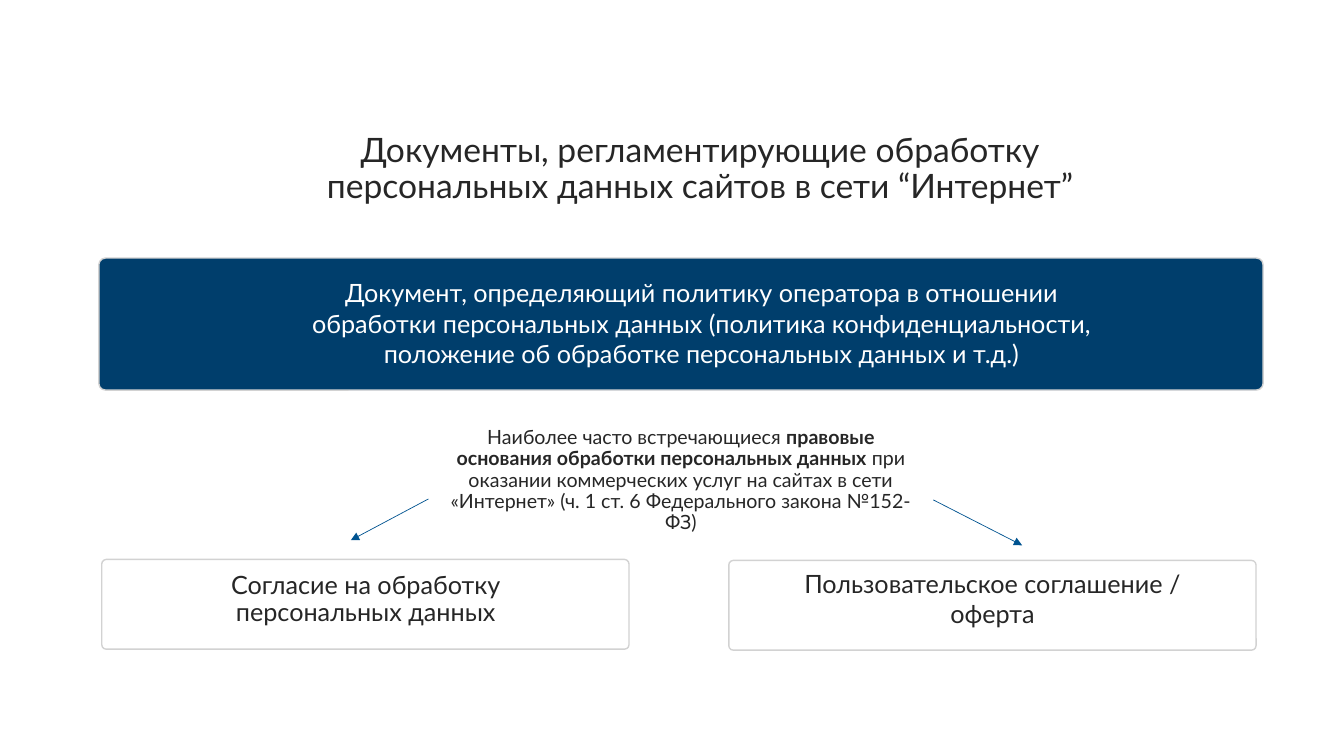
from dataclasses import dataclass

from lxml.etree import SubElement
from pptx import Presentation
from pptx.dml.color import RGBColor
from pptx.enum.shapes import MSO_CONNECTOR, MSO_SHAPE
from pptx.enum.text import MSO_ANCHOR, MSO_AUTO_SIZE, PP_ALIGN
from pptx.oxml.ns import qn
from pptx.slide import Slide
from pptx.util import Pt


@dataclass(frozen=True)
class Theme:
    font: str = "Lato"
    ink: str = "262626"
    white: str = "FFFFFF"
    navy: str = "003E6C"
    border: str = "D2D2D2"
    arrow: str = "005390"
    title_size: float = 24
    body_size: float = 18
    note_size: float = 14


@dataclass(frozen=True)
class Frame:
    left: float
    top: float
    width: float
    height: float

    def lengths(self) -> tuple:
        return Pt(self.left), Pt(self.top), Pt(self.width), Pt(self.height)


@dataclass(frozen=True)
class Span:
    text: str
    bold: bool = False


@dataclass(frozen=True)
class Label:
    frame: Frame
    spans: tuple[Span, ...]
    size: float
    color: str
    line_spacing: float = 1.0


@dataclass(frozen=True)
class Card:
    frame: Frame
    fill: str | None = None


@dataclass(frozen=True)
class Arrow:
    start: tuple[float, float]
    end: tuple[float, float]


THEME = Theme()
CARD_WIDTH, CARD_HEIGHT = 376.6, 64.1

TITLE = Label(
    Frame(211.7, 91.4, 576.7, 54.7),
    (Span("Документы, регламентирующие обработку персональных данных сайтов в сети “Интернет”"),),
    THEME.title_size, THEME.ink, 0.9,
)

CARDS = (
    Card(Frame(70.6, 184.3, 831.6, 94.3), THEME.navy),
    Card(Frame(72.7, 399.6, CARD_WIDTH, CARD_HEIGHT)),
    Card(Frame(520.6, 400.3, CARD_WIDTH, CARD_HEIGHT)),
)

LABELS = (
    Label(
        Frame(213.1, 205.2, 576, 51.1),
        (Span("Документ, определяющий политику оператора в отношении обработки персональных данных "
              "(политика конфиденциальности, положение об обработке персональных данных и т.д.)"),),
        THEME.body_size, THEME.white,
    ),
    Label(
        Frame(312.5, 319.7, 347.8, 47.5),
        (Span("Наиболее часто встречающиеся "),
         Span("правовые основания обработки персональных данных ", True),
         Span("при оказании коммерческих услуг на сайтах в сети «Интернет» "
              "(ч. 1 ст. 6 Федерального закона №152-ФЗ)")),
        THEME.note_size, THEME.ink, 0.9,
    ),
    Label(
        Frame(98.6, 381.6, 325.4, 93.6),
        (Span("Согласие на обработку персональных данных"),),
        THEME.body_size, THEME.ink, 0.9,
    ),
    Label(
        Frame(560.2, 413.3, 297.4, 28.8),
        (Span("Пользовательское соглашение / оферта"),),
        THEME.body_size, THEME.ink,
    ),
)

ARROWS = (
    Arrow((306, 356.4), (250.6, 385.9)),
    Arrow((666.7, 357.1), (730.1, 389.5)),
)


def write_label(box, label: Label, anchor: MSO_ANCHOR) -> None:
    box.left, box.top, box.width, box.height = label.frame.lengths()
    frame = box.text_frame
    frame.word_wrap = True
    frame.auto_size = MSO_AUTO_SIZE.NONE
    frame.vertical_anchor = anchor
    paragraph = frame.paragraphs[0]
    paragraph.alignment = PP_ALIGN.CENTER
    paragraph.line_spacing = label.line_spacing
    for span in label.spans:
        run = paragraph.add_run()
        run.text = span.text
        run.font.name = THEME.font
        run.font.size = Pt(label.size)
        run.font.bold = span.bold
        run.font.color.rgb = RGBColor.from_string(label.color)


def draw_card(page: Slide, card: Card) -> None:
    shape = page.shapes.add_shape(MSO_SHAPE.ROUNDED_RECTANGLE, *card.frame.lengths())
    shape.shadow.inherit = False
    shape.adjustments[0] = 0.05
    shape.line.color.rgb = RGBColor.from_string(THEME.border)
    shape.line.width = Pt(1)
    if card.fill:
        shape.fill.solid()
        shape.fill.fore_color.rgb = RGBColor.from_string(card.fill)
    else:
        shape.fill.background()


def draw_arrow(page: Slide, arrow: Arrow) -> None:
    points = (Pt(value) for value in arrow.start + arrow.end)
    connector = page.shapes.add_connector(MSO_CONNECTOR.STRAIGHT, *points)
    connector.line.color.rgb = RGBColor.from_string(THEME.arrow)
    connector.line.width = Pt(0.5)
    SubElement(connector.line._get_or_add_ln(), qn("a:tailEnd"), type="triangle")
    SubElement(connector._element.spPr, qn("a:effectLst"))


def main() -> None:
    deck = Presentation()
    deck.slide_width, deck.slide_height = Pt(960), Pt(540)
    page = deck.slides.add_slide(deck.slide_layouts.get_by_name("Title Only"))
    write_label(page.shapes.title, TITLE, MSO_ANCHOR.TOP)
    for card in CARDS:
        draw_card(page, card)
    for label in LABELS:
        box = page.shapes.add_textbox(*label.frame.lengths())
        write_label(box, label, MSO_ANCHOR.MIDDLE)
    for arrow in ARROWS:
        draw_arrow(page, arrow)
    deck.save("out.pptx")


if __name__ == "__main__":
    main()
